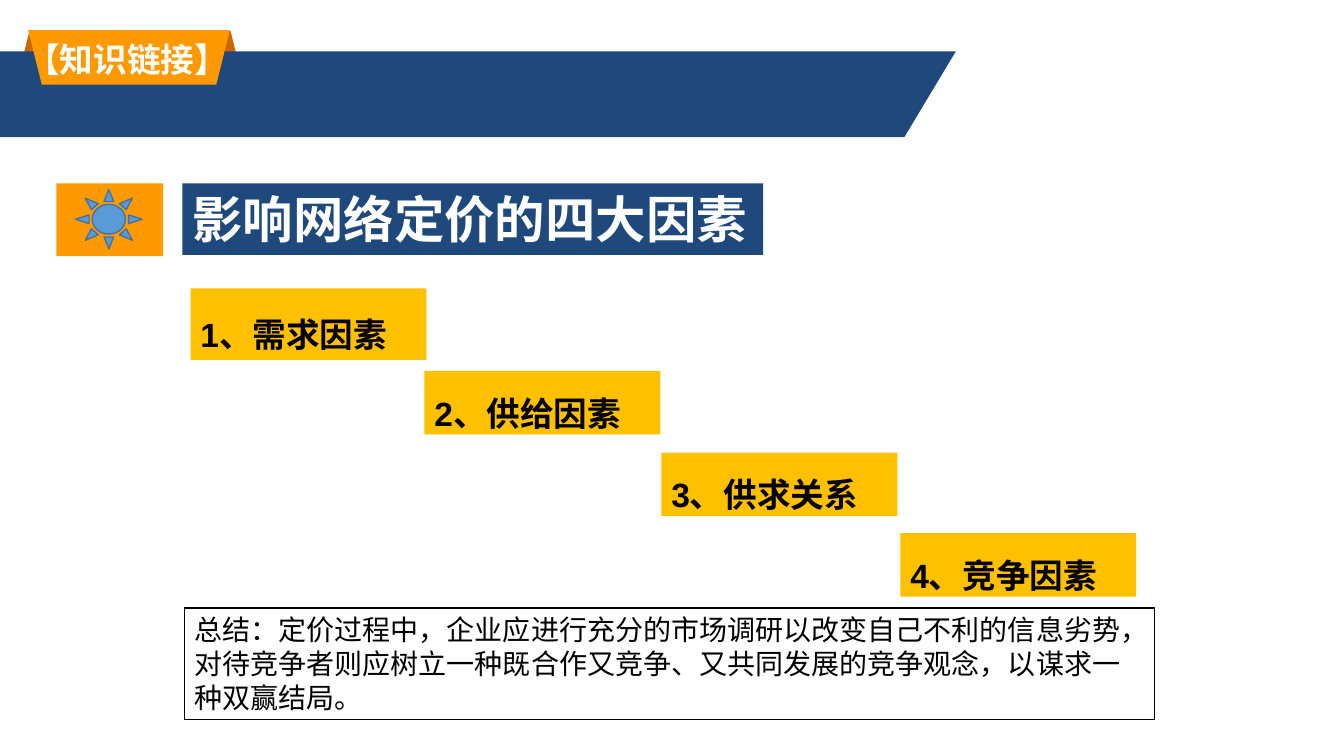
from pptx import Presentation
from pptx.dml.color import RGBColor
from pptx.enum.shapes import MSO_SHAPE
from pptx.enum.text import MSO_ANCHOR, MSO_AUTO_SIZE, PP_ALIGN
from pptx.util import Inches, Pt

COLORS = {
    "navy": "1F487C", "orange": "FF9900", "fold": "CC6600", "amber": "FFC000",
    "sun": "5B9BD5", "sun_line": "43739E", "white": "FFFFFF", "black": "000000",
}
FACTORS = [
    ("1、需求因素", 1.89, 2.86, 0.71),
    ("2、供给因素", 4.21, 3.68, 0.63),
    ("3、供求关系", 6.56, 4.49, 0.63),
    ("4、竞争因素", 8.93, 5.29, 0.63),
]
SUMMARY = (
    "总结：定价过程中，企业应进行充分的市场调研以改变自己不利的信息劣势，"
    "对待竞争者则应树立一种既合作又竞争、又共同发展的竞争观念，以谋求一种双赢结局。"
)


def color(name):
    """Return the named palette colour."""
    return RGBColor.from_string(COLORS[name])


def paint(shape, fill=None, line=None):
    """Set the fill and outline of a shape and remove its shadow."""
    shape.shadow.inherit = False
    if fill:
        shape.fill.solid()
        shape.fill.fore_color.rgb = color(fill)
    else:
        shape.fill.background()
    if line:
        shape.line.color.rgb = color(line)
        shape.line.width = Pt(1)
    else:
        shape.line.fill.background()


def add_block(slide, kind, box, fill=None, line=None):
    """Add a preset shape in a box given in inches."""
    shape = slide.shapes.add_shape(kind, *map(Inches, box))
    paint(shape, fill, line)
    return shape


def write(shape, text, size, font_color, bold=True, align=PP_ALIGN.LEFT,
          anchor=MSO_ANCHOR.TOP, wrap=True, spacing=None):
    """Write one formatted paragraph into a shape that grows with its text."""
    frame = shape.text_frame
    frame.text = text
    frame.word_wrap = wrap
    frame.auto_size = MSO_AUTO_SIZE.SHAPE_TO_FIT_TEXT
    frame.vertical_anchor = anchor
    paragraph = frame.paragraphs[0]
    paragraph.alignment = align
    if spacing:
        paragraph.line_spacing = spacing
    font = paragraph.runs[0].font
    font.name = "Arial"
    font.size = Pt(size)
    font.bold = bold
    font.color.rgb = color(font_color)


def add_banner(slide, left, top, width, height):
    """Draw the slanted banner with its folded section tag."""
    add_block(slide, MSO_SHAPE.TRAPEZOID, (left + 0.16, top + 0.01, 2.26, 0.53), "fold")
    band_top, bottom, right = top + 0.21, top + height, left + width
    builder = slide.shapes.build_freeform(Inches(left), Inches(band_top))
    corners = [(right, band_top), (right - 0.51, bottom), (left, bottom)]
    builder.add_line_segments([(Inches(x), Inches(y)) for x, y in corners])
    paint(builder.convert_to_shape(), "navy")
    tag = add_block(slide, MSO_SHAPE.TRAPEZOID, (left + 0.28, top, 2, 0.54), "orange")
    tag.rotation = 180
    label_box = (left, top + 0.04, 2.52, 0.5)
    label = slide.shapes.add_textbox(*map(Inches, label_box))
    write(label, "【知识链接】", 24, "white", align=PP_ALIGN.CENTER)


def add_heading(slide, left, top, width, height):
    """Draw the sun badge and the heading beside it."""
    title_left = left + 1.25
    title_box = (title_left, top, left + width - title_left, height)
    title = add_block(slide, MSO_SHAPE.RECTANGLE, title_box, "navy")
    write(title, "影响网络定价的四大因素", 36, "white", wrap=False)
    add_block(slide, MSO_SHAPE.RECTANGLE, (left, top, 1.06, 0.72), "orange")
    add_block(slide, MSO_SHAPE.SUN, (left + 0.19, top + 0.06, 0.66, 0.59), "sun", "sun_line")


def add_factor(slide, text, left, top, height):
    """Draw one step of the factor staircase."""
    step = add_block(slide, MSO_SHAPE.RECTANGLE, (left, top, 2.34, height), "amber")
    write(step, text, 24, "black", anchor=MSO_ANCHOR.MIDDLE, spacing=1.5)


def add_summary(slide, left, top, width, height):
    """Draw the outlined summary box."""
    summary = add_block(slide, MSO_SHAPE.RECTANGLE, (left, top, width, height), line="black")
    write(summary, SUMMARY, 20, "black", bold=False)


def main():
    """Build and save the slide."""
    presentation = Presentation()
    presentation.slide_width = Inches(13.33)
    presentation.slide_height = Inches(7.5)
    slide = presentation.slides.add_slide(presentation.slide_layouts[6])
    add_banner(slide, 0, 0.3, 9.48, 1.06)
    add_heading(slide, 0.56, 1.82, 7.01, 0.71)
    for factor in FACTORS:
        add_factor(slide, *factor)
    add_summary(slide, 1.83, 6.03, 9.62, 1.11)
    presentation.save("out.pptx")


if __name__ == "__main__":
    main()
